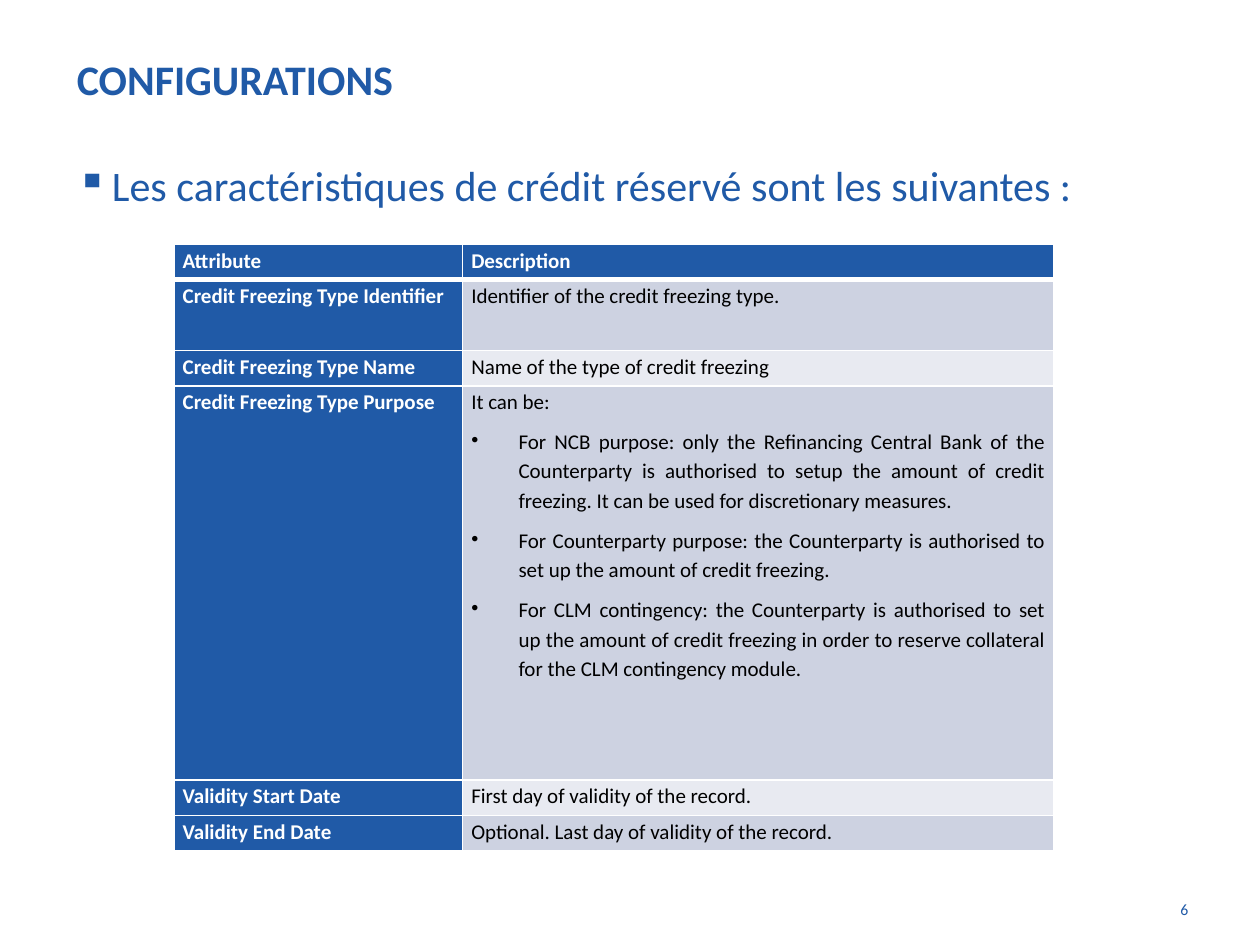
from dataclasses import dataclass

from lxml.etree import SubElement
from pptx import Presentation
from pptx.dml.color import RGBColor
from pptx.enum.text import MSO_ANCHOR as Anchor, PP_ALIGN as Align
from pptx.oxml.ns import qn
from pptx.slide import Slide
from pptx.table import _Cell as Cell
from pptx.text.text import TextFrame
from pptx.util import Pt


@dataclass(frozen=True)
class Theme:
    """Colours, font and type sizes of the slide."""
    blue: str = "205AA7"
    white: str = "FFFFFF"
    black: str = "000000"
    dark_band: str = "CDD2E1"
    light_band: str = "E8EAF1"
    font: str = "Calibri"
    heading: float = 24
    table: float = 12
    number: float = 9


@dataclass(frozen=True)
class TextStyle:
    """Run and paragraph formatting."""
    size: float
    color: str
    bold: bool = False
    align: Align = Align.LEFT
    line_spacing: float = 1.0
    space: float = 0


@dataclass(frozen=True)
class Bullet:
    """Bullet character and hanging indent in points."""
    character: str
    indent: float


@dataclass(frozen=True)
class Attribute:
    """One table row: its name, description, list items and height."""
    name: str
    description: str
    height: float = 20.2
    items: tuple[str, ...] = ()


THEME = Theme()
COLUMN_WIDTHS = (164.9, 338.1)
TABLE_BULLET = Bullet("•", 27)
ROWS = (
    Attribute("Attribute", "Description"),
    Attribute("Credit Freezing Type Identifier",
              "Identifier of the credit freezing type.", 40.4),
    Attribute("Credit Freezing Type Name", "Name of the type of credit freezing"),
    Attribute("Credit Freezing Type Purpose", "It can be:", 225.4, (
        "For NCB purpose: only the Refinancing Central Bank of the Counterparty "
        "is authorised to setup the amount of credit freezing. It can be used "
        "for discretionary measures.",
        "For Counterparty purpose: the Counterparty is authorised to set up "
        "the amount of credit freezing.",
        "For CLM contingency: the Counterparty is authorised to set up the amount "
        "of credit freezing in order to reserve collateral for the CLM "
        "contingency module.",
    )),
    Attribute("Validity Start Date", "First day of validity of the record."),
    Attribute("Validity End Date", "Optional. Last day of validity of the record."),
)


def write_paragraph(frame: TextFrame, text: str, style: TextStyle,
                    bullet: Bullet | None = None, first: bool = True) -> None:
    """Write one formatted paragraph into a text frame."""
    paragraph = frame.paragraphs[0] if first else frame.add_paragraph()
    paragraph.alignment = style.align
    paragraph.line_spacing = style.line_spacing
    paragraph.space_before = Pt(0 if first else style.space)
    paragraph.space_after = Pt(style.space)
    if bullet:
        properties = paragraph._p.get_or_add_pPr()
        properties.set("marL", str(Pt(bullet.indent)))
        properties.set("indent", str(-Pt(bullet.indent)))
        SubElement(properties, qn("a:buChar"), char=bullet.character)
    run = paragraph.add_run()
    run.text = text
    run.font.name = THEME.font
    run.font.size = Pt(style.size)
    run.font.bold = style.bold
    run.font.color.rgb = RGBColor.from_string(style.color)


def add_title(slide: Slide, text: str) -> None:
    """Place and fill the title placeholder."""
    title = slide.shapes.title
    title.left, title.top, title.width, title.height = Pt(36.7), Pt(0), Pt(648), Pt(90)
    title.text_frame.vertical_anchor = Anchor.MIDDLE
    write_paragraph(title.text_frame, text, TextStyle(THEME.heading, THEME.blue, bold=True))


def add_text(slide: Slide, text: str, box: tuple[float, float, float, float],
             style: TextStyle, bullet: Bullet | None = None) -> None:
    """Add a wrapping text box with one paragraph."""
    shape = slide.shapes.add_textbox(*map(Pt, box))
    shape.text_frame.word_wrap = True
    write_paragraph(shape.text_frame, text, style, bullet)


def format_cell(cell: Cell, fill: str, top: float, bottom: float) -> None:
    """Set the margins, borders and fill of a cell."""
    cell.margin_left = cell.margin_right = Pt(5)
    cell.margin_top = cell.margin_bottom = Pt(0)
    properties = cell._tc.get_or_add_tcPr()
    for side, width in (("L", 1), ("R", 1), ("T", top), ("B", bottom)):
        line = SubElement(properties, qn(f"a:ln{side}"), w=str(Pt(width)))
        SubElement(SubElement(line, qn("a:solidFill")), qn("a:srgbClr"), val=THEME.white)
    cell.fill.solid()
    cell.fill.fore_color.rgb = RGBColor.from_string(fill)


def add_attribute_table(slide: Slide) -> None:
    """Add the table of credit freezing attributes."""
    shape = slide.shapes.add_table(
        len(ROWS), len(COLUMN_WIDTHS), Pt(99.4), Pt(139.7),
        Pt(sum(COLUMN_WIDTHS)), Pt(sum(row.height for row in ROWS)))
    table = shape.table
    for column, width in zip(table.columns, COLUMN_WIDTHS):
        column.width = Pt(width)
    for index, row in enumerate(ROWS):
        table.rows[index].height = Pt(row.height)
        band = THEME.dark_band if index % 2 else THEME.light_band
        for column, text in enumerate((row.name, row.description)):
            heading = index == 0 or column == 0
            cell = table.cell(index, column)
            format_cell(cell, THEME.blue if heading else band,
                        top=3 if index == 1 else 1, bottom=3 if index == 0 else 1)
            style = TextStyle(
                THEME.table, THEME.white if heading else THEME.black, heading,
                Align.JUSTIFY if index else Align.LEFT, 1.15, 3)
            write_paragraph(cell.text_frame, text, style)
            for item in row.items if column else ():
                write_paragraph(cell.text_frame, item, style, TABLE_BULLET, first=False)


def main() -> None:
    """Build and save the presentation."""
    presentation = Presentation()
    presentation.slide_width, presentation.slide_height = Pt(720), Pt(540)
    slide = presentation.slides.add_slide(presentation.slide_layouts[5])
    add_title(slide, "CONFIGURATIONS")
    add_text(slide, "6", (643.7, 510.5, 42.5, 28),
             TextStyle(THEME.number, THEME.blue, align=Align.RIGHT))
    add_text(slide, "Les caractéristiques de crédit réservé sont les suivantes :",
             (36.7, 87.8, 648, 356.4),
             TextStyle(THEME.heading, THEME.blue, align=Align.JUSTIFY), Bullet("▪", 20.2))
    add_attribute_table(slide)
    presentation.save("out.pptx")


if __name__ == "__main__":
    main()
